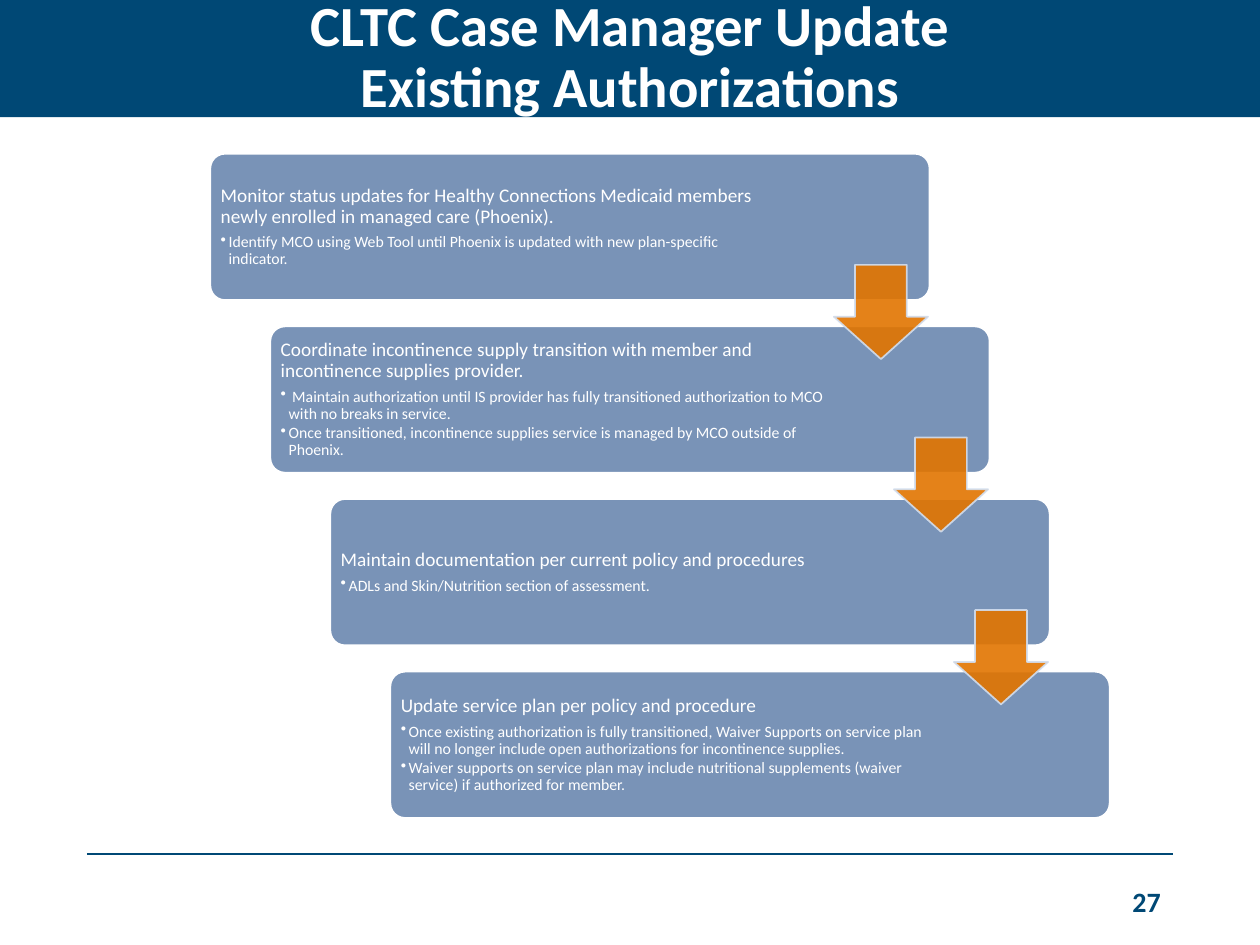
from lxml import etree
from pptx import Presentation
from pptx.dml.color import RGBColor
from pptx.enum.shapes import MSO_CONNECTOR as Connector, MSO_SHAPE as Shape
from pptx.enum.text import MSO_ANCHOR as Anchor, MSO_AUTO_SIZE as AutoSize, PP_ALIGN as Align
from pptx.oxml.ns import qn
from pptx.util import Cm, Pt

TITLE = "CLTC Case Manager Update\vExisting Authorizations"
PAGE_NUMBER = "27"
STEPS = [
    ("Monitor status updates for Healthy Connections Medicaid members newly enrolled "
     "in managed care (Phoenix).",
     ["Identify MCO using Web Tool until Phoenix is updated with new plan-specific indicator."]),
    ("Coordinate incontinence supply transition with member and incontinence supplies provider.",
     [" Maintain authorization until IS provider has fully transitioned authorization to MCO "
      "with no breaks in service.",
      "Once transitioned, incontinence supplies service is managed by MCO outside of Phoenix."]),
    ("Maintain documentation per current policy and procedures",
     ["ADLs and Skin/Nutrition section of assessment."]),
    ("Update service plan per policy and procedure",
     ["Once existing authorization is fully transitioned, Waiver Supports on service plan "
      "will no longer include open authorizations for incontinence supplies.",
      "Waiver supports on service plan may include nutritional supplements (waiver service) "
      "if authorized for member."]),
]

FONT = "Calibri"
NAVY = RGBColor(0x00, 0x48, 0x75)
STEEL = RGBColor(0x79, 0x93, 0xB7)
ORANGE = RGBColor(0xE2, 0x75, 0x00)
PALE = RGBColor(0xD2, 0xDE, 0xEF)
WHITE = RGBColor(0xFF, 0xFF, 0xFF)

# Centimetres
FIRST_LEFT, FIRST_TOP = 4.24, 3.1
STEP_RIGHT, STEP_DOWN = 1.21, 3.48
BOX_WIDTH, BOX_HEIGHT = 14.5, 2.95
TEXT_WIDTH, TEXT_MARGIN = 11.2, 0.09
ARROW_RIGHT, ARROW_DOWN, ARROW_SIZE = 12.57, 2.24, 1.9
BULLET_INDENT = 0.16


def set_font(para, size, color, bold=False):
    font = para.font
    font.name, font.size, font.bold = FONT, Pt(size), bold
    font.color.rgb = color


def add_shape(kind, left, top, width, height, fill, line, adjustments):
    shape = page.shapes.add_shape(kind, Cm(left), Cm(top), Cm(width), Cm(height))
    shape.shadow.inherit = False
    shape.fill.solid()
    shape.fill.fore_color.rgb = fill
    shape.line.color.rgb = line
    shape.line.width = Pt(1)
    for index, value in enumerate(adjustments):
        shape.adjustments[index] = value
    return shape


def add_text_box(left, top, width, height):
    box = page.shapes.add_textbox(Cm(left), Cm(top), Cm(width), Cm(height))
    frame = box.text_frame
    frame.word_wrap = True
    frame.vertical_anchor = Anchor.MIDDLE
    return frame


def add_bullet(para):
    props = para._p.get_or_add_pPr()
    props.set("marL", str(Cm(BULLET_INDENT)))
    props.set("indent", str(-Cm(BULLET_INDENT)))
    etree.SubElement(props, qn("a:buChar")).set("char", "•")


def add_step(left, top, heading, points):
    add_shape(Shape.ROUNDED_RECTANGLE, left, top, BOX_WIDTH, BOX_HEIGHT, STEEL, WHITE, [0.1])
    frame = add_text_box(left + TEXT_MARGIN, top + TEXT_MARGIN,
                         TEXT_WIDTH, BOX_HEIGHT - 2 * TEXT_MARGIN)
    frame.margin_left = frame.margin_right = Cm(0.12)
    frame.margin_top = frame.margin_bottom = Cm(0.12)
    para = frame.paragraphs[0]
    para.text = heading
    para.line_spacing, para.space_after = 0.9, Pt(4)
    set_font(para, 11, WHITE)
    for point in points:
        para = frame.add_paragraph()
        para.text = point
        para.level = 1
        add_bullet(para)
        para.line_spacing, para.space_after = 0.9, Pt(1.35)
        set_font(para, 9, WHITE)


def add_arrow(left, top):
    arrow = add_shape(Shape.DOWN_ARROW, left, top, ARROW_SIZE, ARROW_SIZE,
                      ORANGE, PALE, [0.55, 0.45])
    for color in arrow._element.spPr.iter(qn("a:srgbClr")):
        etree.SubElement(color, qn("a:alpha")).set("val", "90000")


deck = Presentation()
deck.slide_width, deck.slide_height = Cm(25.4), Cm(19.05)
page = deck.slides.add_slide(deck.slide_layouts[5])

rule = page.shapes.add_connector(Connector.STRAIGHT, Cm(1.75), Cm(17.22), Cm(23.65), Cm(17.22))
rule.line.color.rgb = NAVY
rule.line.width = Pt(1)
etree.SubElement(rule._element.spPr, qn("a:effectLst"))

title = page.shapes.title
title.left, title.top, title.width, title.height = Cm(0), Cm(0), Cm(25.4), Cm(2.36)
title.fill.solid()
title.fill.fore_color.rgb = NAVY
title.text_frame.text = TITLE
title.text_frame.auto_size = AutoSize.NONE
title.text_frame.vertical_anchor = Anchor.MIDDLE
heading_para = title.text_frame.paragraphs[0]
heading_para.alignment = Align.CENTER
heading_para.line_spacing = 0.9
set_font(heading_para, 32.4, WHITE, bold=True)

number = add_text_box(17.93, 17.65, 5.72, 1.02).paragraphs[0]
number.text = PAGE_NUMBER
number.alignment = Align.RIGHT
set_font(number, 16, NAVY, bold=True)

corners = [(FIRST_LEFT + i * STEP_RIGHT, FIRST_TOP + i * STEP_DOWN) for i in range(len(STEPS))]
for (left, top), (heading, points) in zip(corners, STEPS):
    add_step(left, top, heading, points)
for left, top in corners[:-1]:
    add_arrow(left + ARROW_RIGHT, top + ARROW_DOWN)

deck.save("out.pptx")
